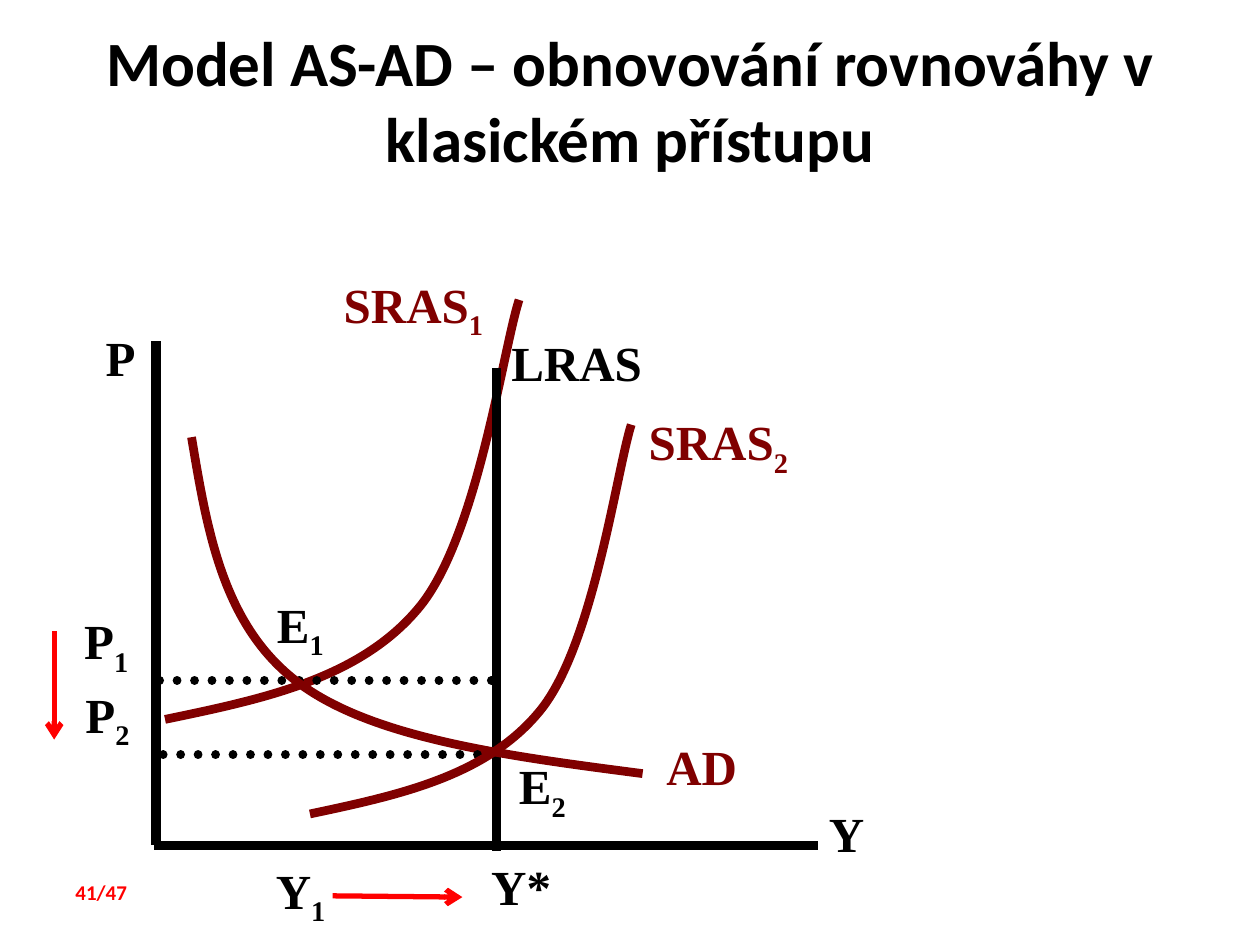
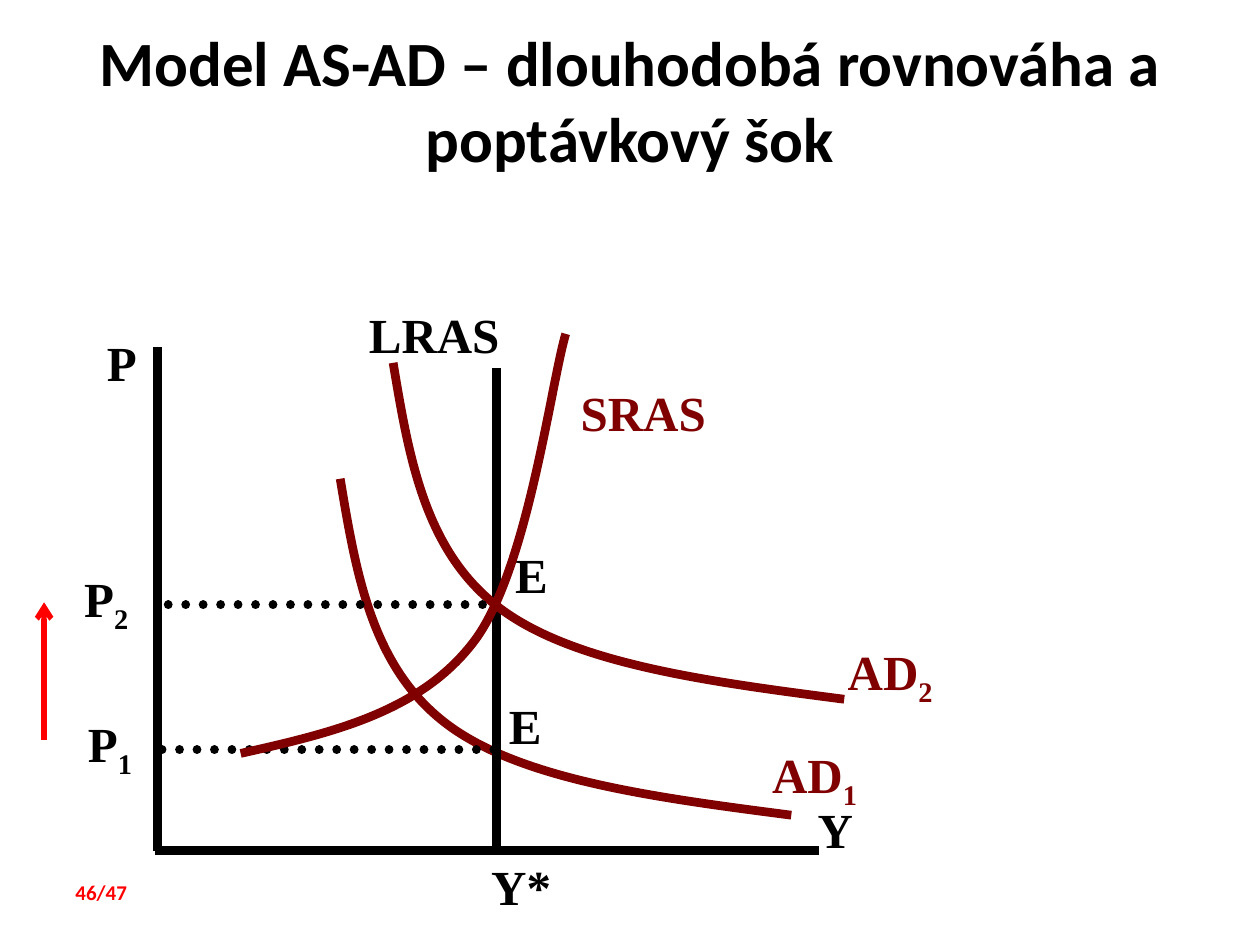
from lxml import etree
from pptx import Presentation
from pptx.dml.color import RGBColor
from pptx.enum.dml import MSO_LINE
from pptx.enum.shapes import MSO_CONNECTOR, MSO_SHAPE
from pptx.enum.text import MSO_ANCHOR, PP_ALIGN
from pptx.oxml.ns import qn
from pptx.util import Inches, Pt

STRAIGHT = MSO_CONNECTOR.STRAIGHT
RECT = MSO_SHAPE.RECTANGLE
DOTS = MSO_LINE.ROUND_DOT
TOP = MSO_ANCHOR.TOP
LEFT, CENTER = PP_ALIGN.LEFT, PP_ALIGN.CENTER

COLORS = {"ink": "000000", "curve": "800000", "move": "FF0000", "paper": "FFFFFF"}
FORMATS = {
    "title": {"name": "Calibri", "size": Pt(36), "bold": True},
    "label": {"name": "Times New Roman", "size": Pt(28), "bold": True},
    "page": {"name": "Calibri", "size": Pt(12), "bold": True},
}

# Bezier points of each curve, in percent of its box
SUPPLY = [(0, 100), (27.4, 95.2), (54.8, 90.4), (71.5, 73.6),
          (88.2, 57), (95.4, 12), (100, 0)]
DEMAND = [(0, 0), (3.5, 28.1), (7, 56.2), (23.7, 73),
          (40.2, 89.6), (70.1, 94.8), (100, 100)]


class Deck:
    def __init__(self):
        self.prs = Presentation()
        self.prs.slide_width = Inches(10)
        self.prs.slide_height = Inches(7.5)

    def color(self, name):
        return RGBColor.from_string(COLORS[name])

    def start(self, title, page):
        self.slide = self.prs.slides.add_slide(self.prs.slide_layouts[6])
        band = self.slide.shapes.add_shape(
            RECT, 0, Inches(0.14), Inches(10), Inches(1.31))
        band.shadow.inherit = False
        band.fill.solid()
        band.fill.fore_color.rgb = self.color("paper")
        band.line.fill.background()
        self.fill_in(band, title, "title", "ink", align=CENTER)
        self.text(page, 0.5, 6.93, 0.92, 0.3, "page", "move")

    def fill_in(self, shape, text, style, color, sub="", align=LEFT):
        frame = shape.text_frame
        frame.word_wrap = True
        frame.vertical_anchor = TOP
        par = frame.paragraphs[0]
        par.alignment = align
        for part in filter(None, (text, sub)):
            run = par.add_run()
            run.text = part
            for key, value in FORMATS[style].items():
                setattr(run.font, key, value)
            run.font.color.rgb = self.color(color)
        if sub:
            run.font._element.set("baseline", "-25000")

    def text(self, text, x, y, wide, high, style, color, sub=""):
        box = self.slide.shapes.add_textbox(*map(Inches, (x, y, wide, high)))
        self.fill_in(box, text, style, color, sub)

    def label(self, text, x, y, sub="", color="ink", wide=0.67):
        self.text(text, x, y, wide, 0.57, "label", color, sub)

    def stroke(self, shape, color, width):
        shape.line.color.rgb = self.color(color)
        shape.line.width = Pt(width)

    def line(self, x1, y1, x2, y2, color="ink", width=5):
        line = self.slide.shapes.add_connector(
            STRAIGHT, *map(Inches, (x1, y1, x2, y2)))
        self.stroke(line, color, width)
        etree.SubElement(line._element.spPr, qn("a:effectLst"))
        return line

    def dots(self, x1, x2, y):
        line = self.line(x1, y, x2, y).line
        line.dash_style = DOTS
        line._get_or_add_ln().set("cap", "rnd")

    def arrow(self, *ends):
        line = self.line(*ends, color="move", width=3)
        tail = etree.SubElement(line.line._get_or_add_ln(), qn("a:tailEnd"))
        tail.set("type", "arrow")

    def curve(self, points, x, y, wide, high):
        spots = [(Inches(x + wide * px / 100), Inches(y + high * py / 100))
                 for px, py in points]
        form = self.slide.shapes.build_freeform(*spots[0])
        form.add_line_segments(spots[1:], close=False)
        shape = form.convert_to_shape()
        shape.shadow.inherit = False
        shape.fill.background()
        self.stroke(shape, "curve", 5)
        # Turn each three straight segments into one Bezier arc
        steps = shape._element.xpath(".//a:lnTo")
        for i in range(0, len(steps), 3):
            arc = etree.Element(qn("a:cubicBezTo"))
            steps[i].addprevious(arc)
            for step in steps[i:i + 3]:
                arc.append(step[0])
                step.getparent().remove(step)

    def demand(self, x, y):
        self.curve(DEMAND, x, y, 3.58, 2.67)

    def axes(self, x, y):
        self.line(x, y - 4, x, y, width=5.5)
        self.line(x - 0.02, y, x + 5.25, y)
        self.label("P", x - 0.5, y - 4.16)

    def output(self, x, y):
        """Long-run supply at potential output; x, y place its name."""
        self.line(3.94, 6.75, 3.94, 2.92)
        self.label("LRAS", x, y, wide=1.5)
        self.label("Y*", 3.8, 6.75, wide=0.92)


def restore(deck):
    deck.start("Model AS-AD – obnovování rovnováhy v klasickém přístupu", "41/47")
    deck.axes(1.24, 6.71)
    deck.label("Y", 6.48, 6.33)
    # First equilibrium
    deck.label("SRAS", 2.63, 2.13, "1", "curve", 1.63)
    deck.curve(SUPPLY, 1.31, 2.38, 2.81, 3.33)
    deck.dots(3.9, 1.19, 5.4)
    deck.label("P", 0.57, 4.8, "1")
    deck.label("E", 2.1, 4.67, "1")
    deck.label("Y", 2.09, 6.78, "1", wide=0.92)
    deck.output(3.96, 2.59)
    deck.demand(1.52, 3.47)
    deck.label("AD", 5.19, 5.8, color="curve", wide=1.17)
    # Second equilibrium
    deck.dots(3.79, 1.23, 5.99)
    deck.label("P", 0.58, 5.38, "2")
    deck.label("E", 4.02, 5.95, "2")
    deck.label("SRAS", 5.05, 3.22, "2", "curve", 1.48)
    deck.curve(SUPPLY, 2.46, 3.37, 2.55, 3.09)
    # Price falls, output grows
    deck.arrow(0.43, 5.01, 0.43, 5.87)
    deck.arrow(2.64, 7.11, 3.67, 7.12)


def shock(deck):
    deck.start("Model AS-AD – dlouhodobá rovnováha a poptávkový šok", "46/47")
    deck.axes(1.25, 6.75)
    deck.label("Y", 6.39, 6.3)
    # Demand before the shock
    deck.demand(2.7, 3.8)
    deck.label("AD", 6.03, 5.86, "1", "curve", 1.17)
    deck.dots(3.92, 1.23, 5.95)
    deck.label("P", 0.6, 5.61, "1")
    deck.output(2.83, 2.37)
    deck.label("E", 3.94, 5.47)
    # Demand after the shock
    deck.demand(3.12, 2.88)
    deck.label("AD", 6.63, 5.04, "2", "curve", 1.17)
    deck.dots(3.83, 1.25, 4.8)
    deck.label("P", 0.57, 4.46, "2")
    deck.label("E", 3.99, 4.27)
    deck.arrow(0.35, 5.87, 0.35, 4.78)
    # Short-run supply
    deck.label("SRAS", 4.51, 2.99, color="curve", wide=1.5)
    deck.curve(SUPPLY, 1.91, 2.65, 2.58, 3.33)


def main():
    deck = Deck()
    restore(deck)
    shock(deck)
    deck.prs.save("out.pptx")


if __name__ == "__main__":
    main()
